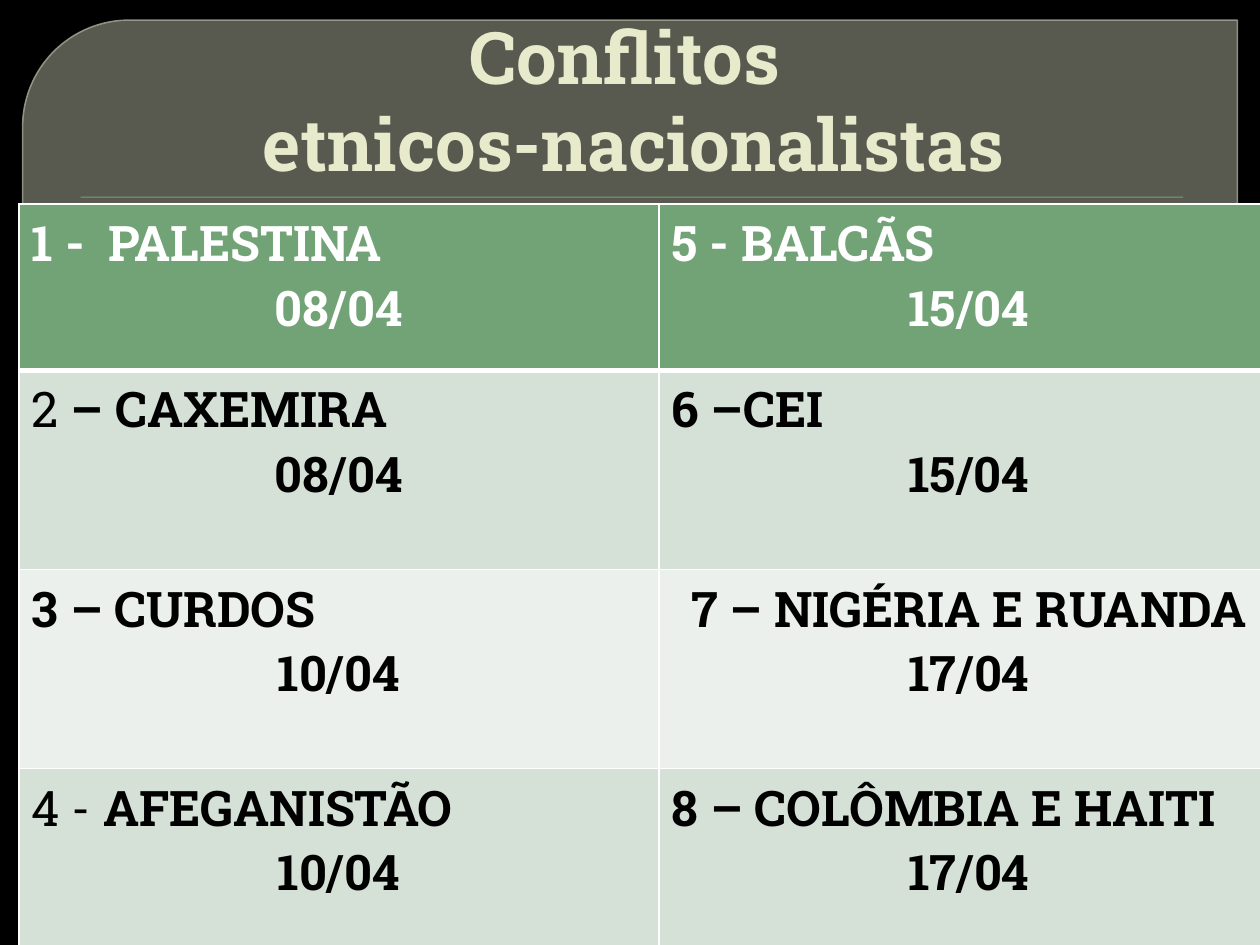
from lxml import etree
from pptx import Presentation
from pptx.dml.color import RGBColor
from pptx.enum.shapes import MSO_SHAPE
from pptx.enum.text import MSO_ANCHOR, MSO_AUTO_SIZE, PP_ALIGN
from pptx.oxml.ns import qn
from pptx.util import Pt

PX = 9144
FONT = "Roboto Slab"
LEFT, CENTER = PP_ALIGN.LEFT, PP_ALIGN.CENTER
BOTTOM = MSO_ANCHOR.BOTTOM
NO_FIT = MSO_AUTO_SIZE.NONE
PANEL, RECT = MSO_SHAPE.ROUND_2_DIAG_RECTANGLE, MSO_SHAPE.RECTANGLE

COLORS = {
    "background": "000000",
    "panel": "888B7B",
    "panel_line": "9DA090",
    "accent": "72A376",
    "title": "E7EACB",
    "band_dark": "D5E0D6",
    "band_light": "EBF0EC",
    "white": "FFFFFF",
    "black": "000000",
}

COL_WIDTHS = [508, 492]
ROW_HEIGHTS = [132, 158, 158, 158]
CONFLICTS = [
    [("1 -  ", "PALESTINA", "08/04"), ("5 - ", "BALCÃS", "15/04")],
    [("2 ", "– CAXEMIRA", "08/04"), ("6 ", "–CEI", "15/04")],
    [("3 ", "– CURDOS", "10/04"), ("7 ", "– NIGÉRIA E RUANDA", "17/04")],
    [("4 - ", "AFEGANISTÃO", "10/04"), ("8 ", "– COLÔMBIA E HAITI", "17/04")],
]
LIGHT_NUMBERS = {"2 ", "4 - "}
CENTERED_NAMES = {"7 "}


def rgb(name):
    return RGBColor.from_string(COLORS[name])


def emu(*lengths):
    return [n * PX for n in lengths]


def add_text(p, text, size=28, color="black", bold=True, align=LEFT):
    p.alignment = align
    r = p.add_run()
    r.text = text
    r.font.name = FONT
    r.font.size = Pt(size)
    r.font.bold = bold
    r.font.color.rgb = rgb(color)


def set_alpha(fill_parent, percent):
    color = fill_parent.find(qn("a:solidFill"))[0]
    etree.SubElement(color, qn("a:alpha"), val=str(percent * 1000))


def set_border(cell, side, width):
    ln = etree.Element(qn(f"a:ln{side}"), w=str(Pt(width)))
    fill = etree.SubElement(ln, qn("a:solidFill"))
    etree.SubElement(fill, qn("a:srgbClr"), val=COLORS["white"])
    tc_pr = cell._tc.get_or_add_tcPr()
    tc_pr.insert(len(tc_pr.findall("*")) - 1, ln)


def add_shape(s, kind, box, fill):
    sp = s.shapes.add_shape(kind, *emu(*box))
    sp.shadow.inherit = False
    sp.fill.solid()
    sp.fill.fore_color.rgb = rgb(fill)
    sp.line.fill.background()
    return sp


def add_backdrop(s, x, y, w, h):
    panel = add_shape(s, PANEL, (x, y, w, h), "panel")
    panel.adjustments[0] = 0.118
    panel.adjustments[1] = 0
    panel.line.color.rgb = rgb("panel_line")
    panel.line.width = Pt(0.87)
    sp_pr = panel.element.spPr
    set_alpha(sp_pr, 65)
    set_alpha(sp_pr.find(qn("a:ln")), 88)
    add_shape(s, RECT, (x + 46, y + 140, w - 89, 1), "accent")


def place_title(s, x, y, w, h):
    title = s.shapes.title
    title.left, title.top, title.width, title.height = emu(x, y, w, h)
    title.element.getparent().append(title.element)
    tf = title.text_frame
    tf.word_wrap = True
    tf.auto_size = NO_FIT
    tf.vertical_anchor = BOTTOM
    p = tf.paragraphs[0]
    p._p.get_or_add_pPr().set("marL", str(6 * PX))
    style = {"size": 41.4, "color": "title", "align": CENTER}
    add_text(p, "Conflitos ", **style)
    p.add_line_break()
    add_text(p, "etnicos-nacionalistas", **style)


def fill_cell(cell, row, number, name, date):
    header = row == 0
    fill = "accent" if header else ("band_light", "band_dark")[row % 2]
    color = "white" if header else "black"
    cell.fill.solid()
    cell.fill.fore_color.rgb = rgb(fill)
    widths = {"L": 1, "R": 1, "T": 3 if row == 1 else 1, "B": 3 if header else 1}
    for side, width in widths.items():
        set_border(cell, side, width)
    tf = cell.text_frame
    p = tf.paragraphs[0]
    align = CENTER if number in CENTERED_NAMES else LEFT
    add_text(p, number, color=color, bold=number not in LIGHT_NUMBERS, align=align)
    add_text(p, name, color=color, align=align)
    add_text(tf.add_paragraph(), date, color=color, align=CENTER)


def add_conflict_table(s, x, y):
    box = emu(x, y, sum(COL_WIDTHS), sum(ROW_HEIGHTS))
    table = s.shapes.add_table(len(ROW_HEIGHTS), len(COL_WIDTHS), *box).table
    for column, width in zip(table.columns, COL_WIDTHS):
        column.width = width * PX
    for row, height in zip(table.rows, ROW_HEIGHTS):
        row.height = height * PX
    for i, entries in enumerate(CONFLICTS):
        for j, entry in enumerate(entries):
            fill_cell(table.cell(i, j), i, *entry)


def main():
    prs = Presentation()
    prs.slide_width, prs.slide_height = emu(1000, 750)
    s = prs.slides.add_slide(prs.slide_layouts[5])
    s.background.fill.solid()
    s.background.fill.fore_color.rgb = rgb("background")
    add_backdrop(s, 18, 16, 964, 718)
    place_title(s, 50, 28, 900, 125)
    add_conflict_table(s, 15, 162)
    prs.save("out.pptx")


if __name__ == "__main__":
    main()
